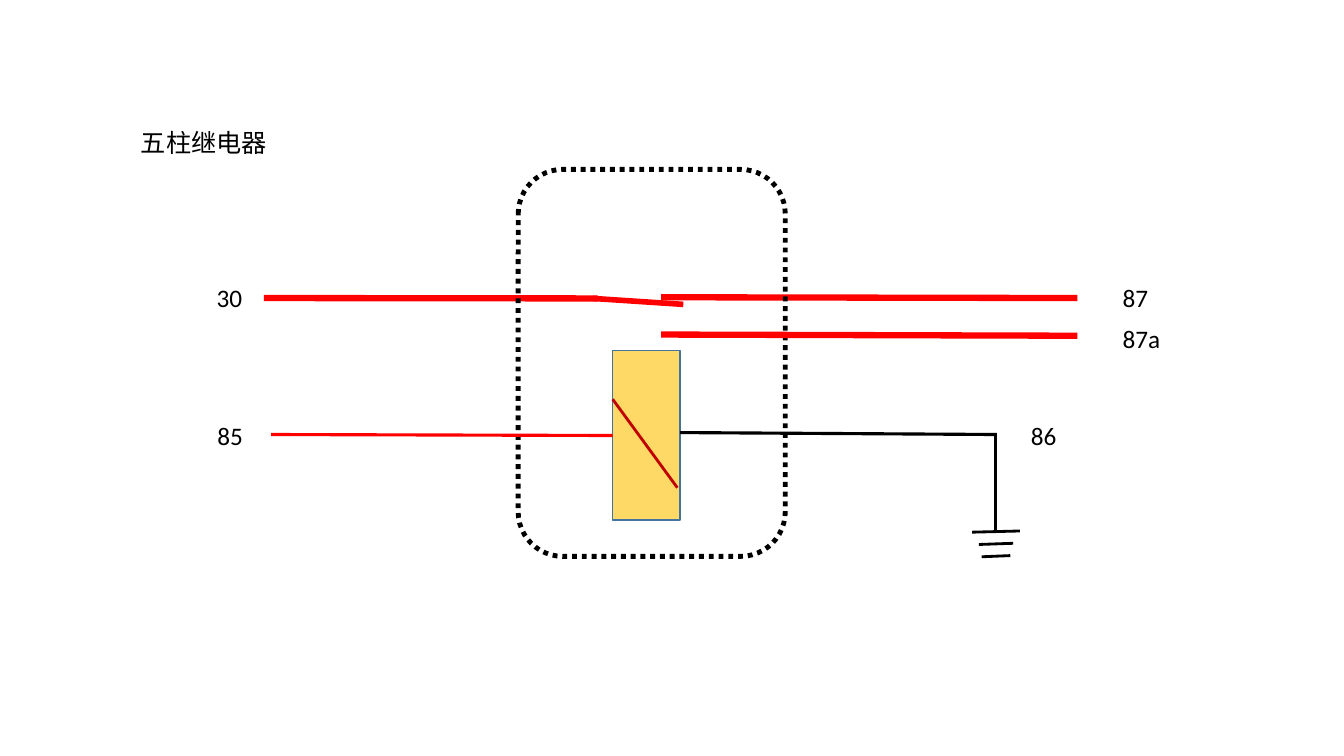
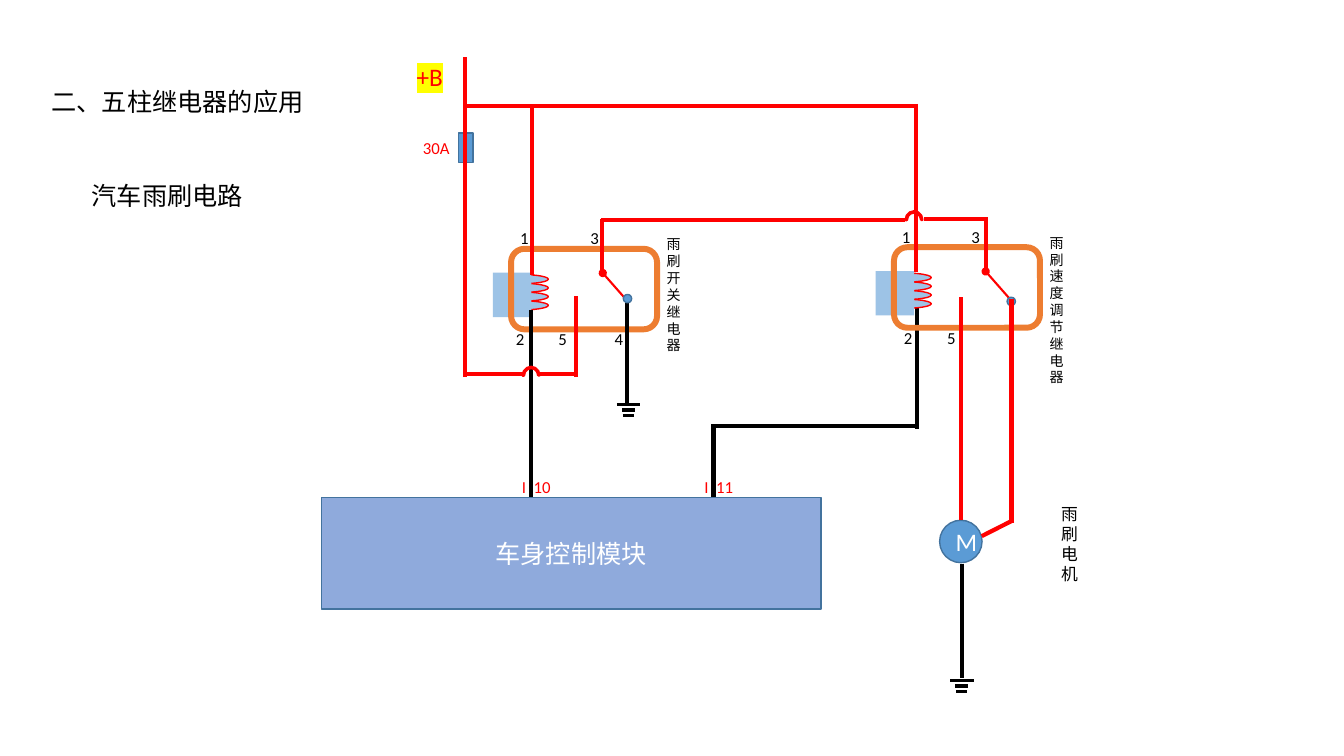
"""Build two slides on five-pin relays: the symbol and a wiper circuit."""
from dataclasses import dataclass

import pptx
import pptx.dml.color
import pptx.enum.dml
import pptx.enum.shapes
import pptx.enum.text
import pptx.oxml
import pptx.oxml.ns
import pptx.util
from lxml import etree

Cm = pptx.util.Cm
Pt = pptx.util.Pt
MSO = pptx.enum.shapes.MSO_SHAPE
CENTER = pptx.enum.text.PP_ALIGN.CENTER


@dataclass(frozen=True)
class Theme:
    font: str = "Calibri"
    black: str = "000000"
    white: str = "FFFFFF"
    red: str = "FF0000"
    dark_red: str = "C00000"
    yellow: str = "FFFF00"
    gold: str = "FFD966"
    orange: str = "ED7D31"
    blue: str = "5B9BD5"
    edge: str = "43739E"
    module: str = "8FAADC"
    coil: str = "9DC3E6"
    body: int = 18
    small: int = 12
    tiny: int = 10


T = Theme()


def rgb(value):
    return pptx.dml.color.RGBColor.from_string(value)


def sub(parent, tag, **attrs):
    return etree.SubElement(parent, pptx.oxml.ns.qn(tag), **attrs)


def write(tf, text, size=T.body, color=T.black, align=None, highlight=None, tab=None):
    p = tf.paragraphs[0]
    if tab:
        tabs = sub(p._p.get_or_add_pPr(), "a:tabLst")
        sub(tabs, "a:tab", pos=str(Cm(tab)), algn="l")
    if align is not None:
        p.alignment = align
    r = p.add_run()
    r.text = text
    r.font.size = Pt(size)
    r.font.color.rgb = rgb(color)
    r.font.name = T.font
    if highlight:
        rPr = r._r.get_or_add_rPr()
        mark = sub(rPr, "a:highlight")
        sub(mark, "a:srgbClr", val=highlight)
        rPr.find(pptx.oxml.ns.qn("a:latin")).addprevious(mark)


class Deck:
    def __init__(self):
        self.prs = pptx.Presentation()
        self.prs.slide_width = Cm(33.87)
        self.prs.slide_height = Cm(19.05)
        self.s = None

    def slide(self):
        self.s = self.prs.slides.add_slide(self.prs.slide_layouts[6])

    def label(self, text, x, y, w=1.5, h=1.0, **fmt):
        sp = self.s.shapes.add_textbox(Cm(x), Cm(y), Cm(w), Cm(h))
        tf = sp.text_frame
        tf.word_wrap = True
        tf.auto_size = pptx.enum.text.MSO_AUTO_SIZE.SHAPE_TO_FIT_TEXT
        write(tf, text, **fmt)

    def shape(self, kind, x, y, w, h, fill=None, line=T.edge, weight=1, text=None):
        sp = self.s.shapes.add_shape(kind, Cm(x), Cm(y), Cm(w), Cm(h))
        sp.shadow.inherit = False
        if fill:
            sp.fill.solid()
            sp.fill.fore_color.rgb = rgb(fill)
        else:
            sp.fill.background()
        if line:
            sp.line.color.rgb = rgb(line)
            sp.line.width = Pt(weight)
        else:
            sp.line.fill.background()
        if text:
            sp.text_frame.word_wrap = True
            sp.text_frame.vertical_anchor = pptx.enum.text.MSO_ANCHOR.MIDDLE
            write(sp.text_frame, text, color=T.white, align=CENTER)
        return sp

    def wire(self, x1, y1, x2, y2, color=T.red, weight=3.0, dot=False):
        con = self.s.shapes.add_connector(
            pptx.enum.shapes.MSO_CONNECTOR.STRAIGHT, Cm(x1), Cm(y1), Cm(x2), Cm(y2))
        con.line.color.rgb = rgb(color)
        con.line.width = Pt(weight)
        if dot:
            sub(con.line._get_or_add_ln(), "a:tailEnd", type="oval")
        sub(con._element.spPr, "a:effectLst")
        return con

    def ground(self, x, y, widths=(0.59, 0.33, 0.28), pitch=0.14, tilt=0.0, weight=2.25):
        for i, w in enumerate(widths):
            bar = y + i * pitch
            self.wire(x - w / 2, bar, x + w / 2, bar - tilt, T.black, weight)

    def hop(self, x, y):
        sp = self.shape(MSO.BLOCK_ARC, x, y, 0.41, 0.43, T.red, T.red, 2)
        for i, value in enumerate((108, 214.67, 0.05)):
            sp.adjustments[i] = value

    def relay(self, x, y, name, top, bottom):
        self.wire(x + 2.97, y + 1.36, x + 2.31, y + 0.61, weight=1.5, dot=True)
        for i in range(4):
            self.shape(MSO.OVAL, x - 0.43, y + 0.65 + 0.22 * i, 1.37, 0.23, T.coil, T.red)
        self.shape(MSO.RECTANGLE, x - 0.46, y + 0.6, 0.97, 1.12, T.coil, None)
        self.shape(MSO.ROUNDED_RECTANGLE, x, y, 3.68, 2.03, None, T.orange, 4.25)
        self.label(name, x + 3.67, y - 0.45, 0.74, 3.25, size=T.tiny)
        for pins, offset in ((top, -0.65), (bottom, 1.9)):
            for pin, left in pins.items():
                self.label(pin, left, y + offset, 0.9, 0.76, size=T.small)


def relay_symbol(deck):
    deck.slide()
    deck.wire(14.94, 7.52, 17.22, 7.67, weight=4)
    for line in ((6.65, 7.51, 15.06, 7.52), (16.66, 7.49, 27.15, 7.51)):
        deck.wire(*line, weight=4.5)
    coil = deck.shape(MSO.RECTANGLE, 15.44, 8.84, 1.7, 4.27, T.gold)
    deck.wire(15.44, 10.06, 17.07, 12.29, T.dark_red, 2)
    case = deck.shape(MSO.ROUNDED_RECTANGLE, 13.06, 4.27, 6.73, 9.75, None, T.black, 3.5)
    case.line.dash_style = pptx.enum.dml.MSO_LINE.ROUND_DOT
    deck.wire(6.83, 10.95, 15.44, 10.97, weight=2.25).end_connect(coil, 1)
    deck.wire(17.14, 10.9, 25.12, 10.95, T.black, 2.25)
    deck.wire(25.09, 10.92, 25.09, 13.41, T.black, 2.25)
    deck.ground(25.1, 13.41, (1.2, 0.86, 0.72), 0.31, 0.03, 2)
    deck.label("85", 4.95, 10.46, 1.7, align=CENTER)
    for text, x, y, w in (("30", 5.21, 7.0, 1.25), ("87", 28.04, 7.0, 1.25),
                          ("86", 25.73, 10.46, 1.25), ("五柱继电器", 3.3, 3.08, 11.28)):
        deck.label(text, x, y, w)
    deck.wire(16.66, 8.43, 27.15, 8.46, weight=4.5)
    deck.label("87a", 28.04, 8.03, 1.73)


def wiper_circuit(deck):
    deck.slide()
    deck.shape(MSO.RECTANGLE, 11.56, 3.35, 0.36, 0.74, T.blue)
    deck.shape(MSO.RECTANGLE, 8.1, 12.53, 12.59, 2.82, T.module, text="车身控制模块")
    motor = deck.shape(MSO.OVAL, 23.68, 13.11, 1.07, 1.07, T.blue, text="M")
    for line in ((23.11, 7.75, 23.11, 10.8), (17.93, 10.74, 23.06, 10.74),
                 (17.98, 10.72, 17.98, 12.52), (24.24, 14.2, 24.24, 17.09)):
        deck.wire(*line, color=T.black)
    deck.ground(24.24, 17.15, weight=2.5)
    deck.relay(22.53, 6.23, "雨刷速度调节继电器",
               {"1": 22.48, "3": 24.23}, {"2": 22.53, "5": 23.62})
    deck.relay(12.88, 6.27, "雨刷开关继电器",
               {"1": 12.86, "3": 14.63}, {"2": 12.75, "5": 13.82, "4": 15.24})
    deck.wire(15.81, 10.16, 15.81, 7.57, T.black)
    deck.ground(15.84, 10.19)
    deck.wire(13.39, 12.52, 13.39, 7.8, T.black)
    for x, y in ((15.71, 7.42), (25.38, 7.49)):
        deck.shape(MSO.OVAL, x, y, 0.21, 0.21, T.blue)
    for line in ((14.51, 7.47, 14.51, 9.5), (11.71, 9.42, 13.18, 9.42),
                 (13.56, 9.42, 14.48, 9.42), (11.72, 9.5, 11.72, 1.43),
                 (23.09, 2.62, 23.09, 6.86), (11.68, 2.67, 23.11, 2.67),
                 (13.41, 2.69, 13.41, 6.93), (24.84, 6.81, 24.84, 5.46),
                 (15.17, 6.86, 15.17, 5.51), (23.29, 5.51, 24.84, 5.51),
                 (15.14, 5.55, 22.81, 5.55), (25.49, 13.18, 25.49, 7.54),
                 (25.53, 13.11, 24.74, 13.51)):
        deck.wire(*line)
    deck.wire(24.215, 13.11, 24.215, 7.49).begin_connect(motor, 0)
    for x, y in ((13.18, 9.25), (22.83, 5.33)):
        deck.hop(x, y)
    deck.label("+B", 10.25, 1.42, color=T.red, highlight=T.yellow)
    deck.label("30A", 10.41, 3.35, size=T.small, color=T.red)
    for text, x in (("I\t10", 12.9), ("I\t11", 17.5)):
        deck.label(text, x, 11.89, 1.73, size=T.small, color=T.red, tab=0.3)
    deck.label("雨刷电机", 26.49, 12.56, 0.53, 2.31, size=T.small)
    deck.label("二、五柱继电器的应用", 1.05, 2.06, 11.28)
    deck.label("汽车雨刷电路", 2.06, 4.42, 5.69)


def main():
    deck = Deck()
    relay_symbol(deck)
    wiper_circuit(deck)
    deck.prs.save("out.pptx")


if __name__ == "__main__":
    main()
